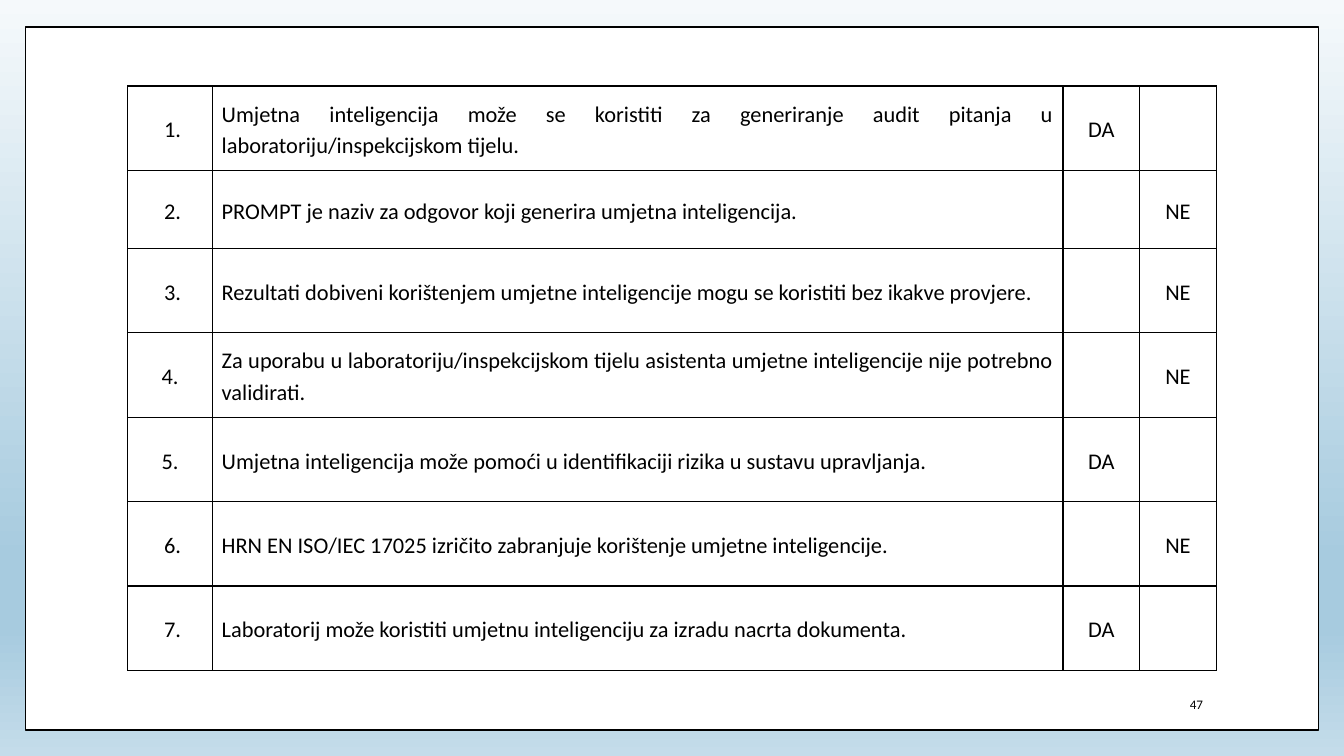
from lxml import etree
from pptx import Presentation
from pptx.dml.color import RGBColor
from pptx.enum.shapes import MSO_SHAPE
from pptx.enum.text import MSO_ANCHOR, PP_ALIGN
from pptx.oxml.ns import qn
from pptx.util import Inches, Pt

CENTER, JUSTIFY, RIGHT = PP_ALIGN.CENTER, PP_ALIGN.JUSTIFY, PP_ALIGN.RIGHT
MIDDLE = MSO_ANCHOR.MIDDLE
RECTANGLE = MSO_SHAPE.RECTANGLE

FONT = "Calibri"
COLORS = {"text": "000000", "line": "000000", "panel": "FFFFFF"}
BACKGROUND_STOPS = [(0, "F5F9FB"), (74, "A7CBDF"), (83, "A7CBDF"), (100, "C4DCEA")]

STATEMENTS = [
    (" 1.", "Umjetna inteligencija može se koristiti za generiranje audit pitanja u laboratoriju/inspekcijskom tijelu.", "DA"),
    (" 2.", "PROMPT je naziv za odgovor koji generira umjetna inteligencija.", "NE"),
    (" 3.", "Rezultati dobiveni korištenjem umjetne inteligencije mogu se koristiti bez ikakve provjere.", "NE"),
    ("4.", "Za uporabu u laboratoriju/inspekcijskom tijelu asistenta umjetne inteligencije nije potrebno validirati.", "NE"),
    ("5.", "Umjetna inteligencija može pomoći u identifikaciji rizika u sustavu upravljanja.", "DA"),
    (" 6.", "HRN EN ISO/IEC 17025 izričito zabranjuje korištenje umjetne inteligencije.", "NE"),
    (" 7.", "Laboratorij može koristiti umjetnu inteligenciju za izradu nacrta dokumenta.", "DA"),
]
PAGE_NUMBER = "47"

TABLE_WIDTH, TABLE_HEIGHT = 8.1, 4.35
NUMBER_WIDTH, ANSWER_WIDTH = 0.63, 0.57
STATEMENT_WIDTH = TABLE_WIDTH - NUMBER_WIDTH - 2 * ANSWER_WIDTH
COLUMN_WIDTHS = [NUMBER_WIDTH, STATEMENT_WIDTH, ANSWER_WIDTH, ANSWER_WIDTH]
COLUMN_ALIGNMENTS = [CENTER, JUSTIFY, CENTER, CENTER]
SHORT_ROW, SHORT_ROW_HEIGHT = 1, 0.58
ROW_HEIGHT = (TABLE_HEIGHT - SHORT_ROW_HEIGHT) / (len(STATEMENTS) - 1)
CELL_FORMAT = {
    "vertical_anchor": MIDDLE,
    "margin_left": Inches(0.07),
    "margin_right": Inches(0.07),
    "margin_top": 0,
    "margin_bottom": 0,
}


def set_attributes(target, values):
    for name, value in values.items():
        setattr(target, name, value)


def write_text(paragraph, text, size, **paragraph_format):
    set_attributes(paragraph, paragraph_format)
    run = paragraph.add_run()
    run.text = text
    set_attributes(run.font, {"name": FONT, "size": Pt(size)})
    run.font.color.rgb = RGBColor.from_string(COLORS["text"])


def add_solid_color(parent, color):
    etree.SubElement(parent, qn("a:srgbClr"), val=color)


def set_background(slide):
    fill = slide.background.fill
    fill.gradient()
    fill.gradient_angle = 270
    stop_list = next(slide.element.iter(qn("a:gsLst")))
    for stop in list(stop_list):
        stop_list.remove(stop)
    for position, color in BACKGROUND_STOPS:
        stop = etree.SubElement(stop_list, qn("a:gs"), pos=str(position * 1000))
        add_solid_color(stop, color)


def add_panel(slide):
    panel = slide.shapes.add_shape(
        RECTANGLE, Inches(0.19), Inches(0.2), Inches(9.62), Inches(5.23))
    panel.shadow.inherit = False
    panel.fill.solid()
    panel.fill.fore_color.rgb = RGBColor.from_string(COLORS["panel"])
    panel.line.color.rgb = RGBColor.from_string(COLORS["line"])
    panel.line.width = Pt(1)


def add_page_number(slide):
    box = slide.shapes.add_textbox(Inches(7.65), Inches(5.1), Inches(1.4), Inches(0.3))
    set_attributes(box.text_frame, {"word_wrap": True, "vertical_anchor": MIDDLE})
    write_text(box.text_frame.paragraphs[0], PAGE_NUMBER, 7,
               alignment=RIGHT, line_spacing=0.9, space_after=Pt(6))


def set_borders(cell):
    properties = cell._tc.get_or_add_tcPr()
    for side in ("lnL", "lnR", "lnT", "lnB"):
        line = etree.SubElement(properties, qn(f"a:{side}"), w=str(Pt(0.75)))
        add_solid_color(etree.SubElement(line, qn("a:solidFill")), COLORS["line"])


def add_statement_table(slide):
    table = slide.shapes.add_table(
        len(STATEMENTS), len(COLUMN_WIDTHS), Inches(0.95), Inches(0.64),
        Inches(TABLE_WIDTH), Inches(TABLE_HEIGHT)).table
    set_attributes(table, {"first_row": False, "horz_banding": False})
    for column, width in zip(table.columns, COLUMN_WIDTHS):
        column.width = Inches(width)
    for index, (row, (number, statement, answer)) in enumerate(zip(table.rows, STATEMENTS)):
        row.height = Inches(SHORT_ROW_HEIGHT if index == SHORT_ROW else ROW_HEIGHT)
        answers = [option if option == answer else "" for option in ("DA", "NE")]
        texts = [number, statement, *answers]
        for cell, text, alignment in zip(row.cells, texts, COLUMN_ALIGNMENTS):
            set_attributes(cell, CELL_FORMAT)
            set_borders(cell)
            cell.fill.background()
            if text:
                write_text(cell.text_frame.paragraphs[0], text, 12, alignment=alignment,
                           line_spacing=1.15, space_after=Pt(3))


def main():
    presentation = Presentation()
    presentation.slide_width = Inches(10)
    presentation.slide_height = Inches(10) * 9 // 16
    slide = presentation.slides.add_slide(presentation.slide_layouts[6])
    set_background(slide)
    add_panel(slide)
    add_page_number(slide)
    add_statement_table(slide)
    presentation.save("out.pptx")


if __name__ == "__main__":
    main()
